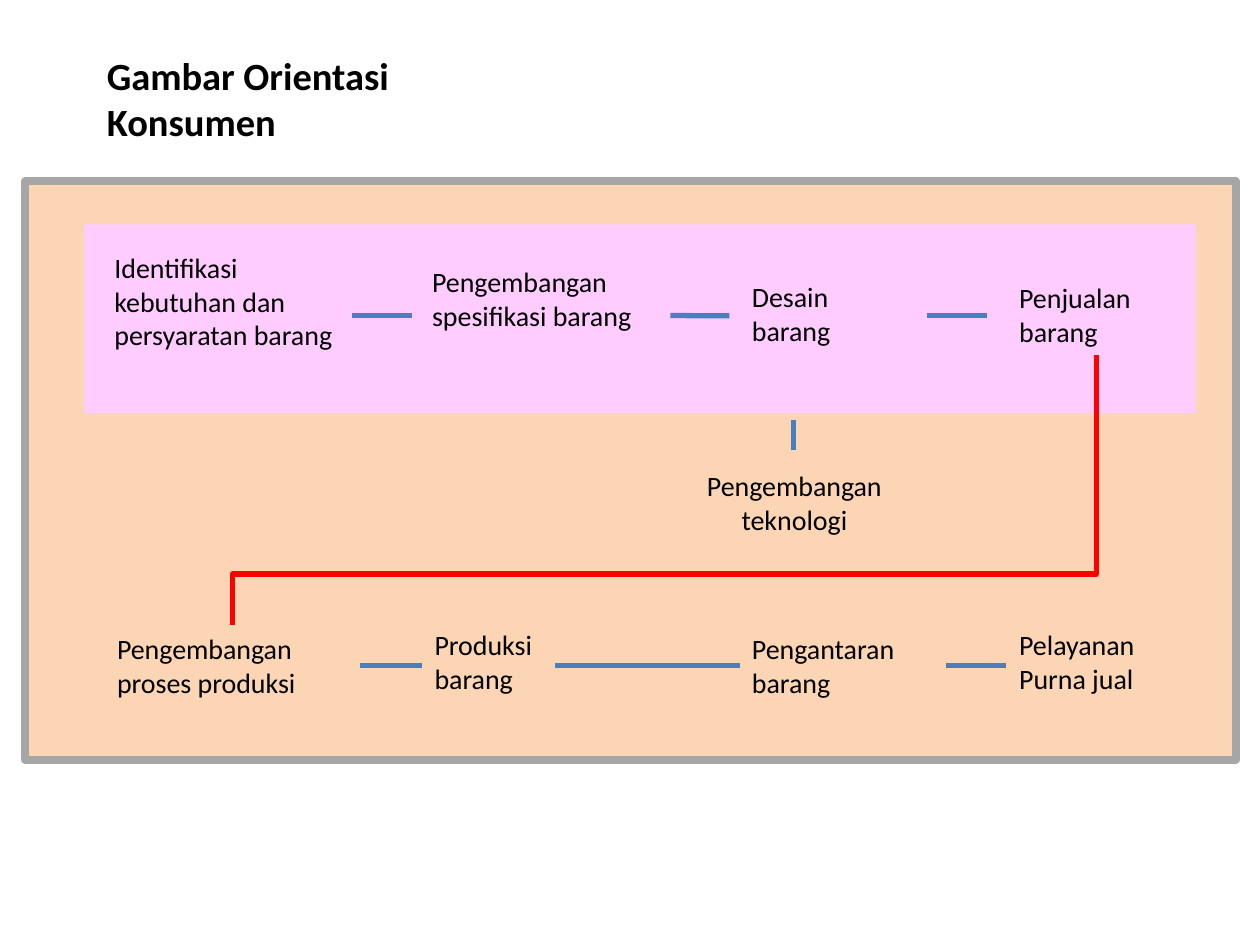
from lxml import etree
from pptx import Presentation
from pptx.dml.color import RGBColor
from pptx.enum.shapes import MSO_CONNECTOR, MSO_SHAPE
from pptx.enum.text import MSO_AUTO_SIZE, PP_ALIGN
from pptx.oxml.ns import qn
from pptx.util import Pt

STRAIGHT, ELBOW = MSO_CONNECTOR.STRAIGHT, MSO_CONNECTOR.ELBOW
RECT = MSO_SHAPE.RECTANGLE
GROW = MSO_AUTO_SIZE.SHAPE_TO_FIT_TEXT
LEFT, CENTER = PP_ALIGN.LEFT, PP_ALIGN.CENTER
SIDE_LEFT, SIDE_RIGHT = 1, 3

THEME = {
    "panel": RGBColor(0xFC, 0xD5, 0xB5),
    "border": RGBColor(0xA6, 0xA6, 0xA6),
    "band": RGBColor(0xFF, 0xCC, 0xFF),
    "link": RGBColor(0x4B, 0x7E, 0xBC),
    "loop": RGBColor(0xFF, 0, 0),
    "ink": RGBColor(0, 0, 0),
    "font": "Calibri",
    "body": Pt(16),
    "title": Pt(22),
    "edge": Pt(4.5),
    "stroke": Pt(3),
}

TITLE = ("Gambar Orientasi\nKonsumen", (54, 26, 245.5, 60.5))

# fill, border, (left, top, width, height)
AREAS = [
    ("panel", "border", (14.4, 103.6, 692, 330.5)),
    ("band", None, (48.2, 128.2, 635, 108)),
]

# key: text, (left, top, width, height), alignment
STEPS = {
    "need": ("Identifikasi kebutuhan dan persyaratan barang",
             (58.3, 139.7, 147.6, 85), LEFT),
    "detail": ("Pengembangan spesifikasi barang", (239.8, 147.6, 143.3, 65.5), LEFT),
    "design": ("Desain\nbarang", (422.6, 156.2, 90.7, 46), LEFT),
    "sale": ("Penjualan\nbarang", (575.3, 157, 102.2, 46), LEFT),
    "tech": ("Pengembangan teknologi", (382.3, 264.4, 143.3, 46), CENTER),
    "process": ("Pengembangan proses produksi", (59.8, 357.3, 146.2, 46), LEFT),
    "make": ("Produksi\nbarang", (241.2, 355, 85, 46), LEFT),
    "send": ("Pengantaran barang", (422.6, 357.3, 118, 46), LEFT),
    "care": ("Pelayanan Purna jual", (575.3, 355, 102.2, 46), LEFT),
}

# start x, end x, step joined at start, step joined at end
TOP_Y, LOW_Y = 180.4, 380.3
TOP_LINKS = [(201.3, 235.4, None, None), (383, 416.8, "detail", None),
             (529.9, 563.8, None, None)]
LOW_LINKS = [(206, 241.2, "process", None), (317.4, 422.6, None, "send"),
             (540.5, 574.6, "send", None)]
TECH_LINK = (453.4, 239.9, 453.4, 256.9)
BEND = 0.81


def assign(target, values):
    for name, value in values.items():
        setattr(target, name, value)


def add_area(slide, fill, border, box):
    area = slide.shapes.add_shape(RECT, *map(Pt, box))
    area.shadow.inherit = False
    area.fill.solid()
    area.fill.fore_color.rgb = THEME[fill]
    if border:
        area.line.color.rgb = THEME[border]
        area.line.width = THEME["edge"]
    else:
        area.line.fill.background()


def add_text(slide, text, box, align=LEFT, size="body", bold=False):
    shape = slide.shapes.add_textbox(*map(Pt, box))
    frame = shape.text_frame
    frame.text = text
    assign(frame, {"word_wrap": True, "auto_size": GROW})
    for para in frame.paragraphs:
        para.alignment = align
        assign(para.font, {"name": THEME["font"], "size": THEME[size], "bold": bold})
        para.font.color.rgb = THEME["ink"]
    return shape


def add_line(slide, kind, ends, color):
    line = slide.shapes.add_connector(kind, *map(Pt, ends))
    line.line.color.rgb = THEME[color]
    line.line.width = THEME["stroke"]
    etree.SubElement(line._element.spPr, qn("a:effectLst"))
    return line


def add_loop(slide, start, end):
    """Run from the bottom of one step down and back to the top of another."""
    (x1, y1, w1, h1), (x2, y2, w2, _) = start, end
    begin, finish = (x1 + w1 / 2, y1 + h1), (x2 + w2 / 2, y2)
    span, drop = begin[0] - finish[0], finish[1] - begin[1]
    mid_x, mid_y = (begin[0] + finish[0]) / 2, (begin[1] + finish[1]) / 2
    # A quarter turn swaps the two extents about the same centre.
    left, top = mid_x - drop / 2, mid_y - span / 2
    loop = add_line(slide, ELBOW, (left, top, left + drop, top + span), "loop")
    props = loop._element.spPr
    props.find(qn("a:xfrm")).set("rot", str(90 * 60000))
    shape = props.find(qn("a:prstGeom"))
    guides = shape.find(qn("a:avLst"))
    if guides is None:
        guides = etree.SubElement(shape, qn("a:avLst"))
    guide = etree.SubElement(guides, qn("a:gd"))
    guide.set("name", "adj1")
    guide.set("fmla", f"val {round(BEND * 100000)}")


def main():
    deck = Presentation()
    assign(deck, {"slide_width": Pt(720), "slide_height": Pt(540)})
    slide = deck.slides.add_slide(deck.slide_layouts[6])

    for area in AREAS:
        add_area(slide, *area)
    steps = {key: add_text(slide, *step) for key, step in STEPS.items()}

    for y, links in ((TOP_Y, TOP_LINKS), (LOW_Y, LOW_LINKS)):
        for x1, x2, first, last in links:
            line = add_line(slide, STRAIGHT, (x1, y, x2, y), "link")
            if first:
                line.begin_connect(steps[first], SIDE_RIGHT)
            if last:
                line.end_connect(steps[last], SIDE_LEFT)
    add_line(slide, STRAIGHT, TECH_LINK, "link")
    add_loop(slide, STEPS["sale"][1], STEPS["process"][1])

    add_text(slide, *TITLE, size="title", bold=True)
    deck.save("out.pptx")


if __name__ == "__main__":
    main()
